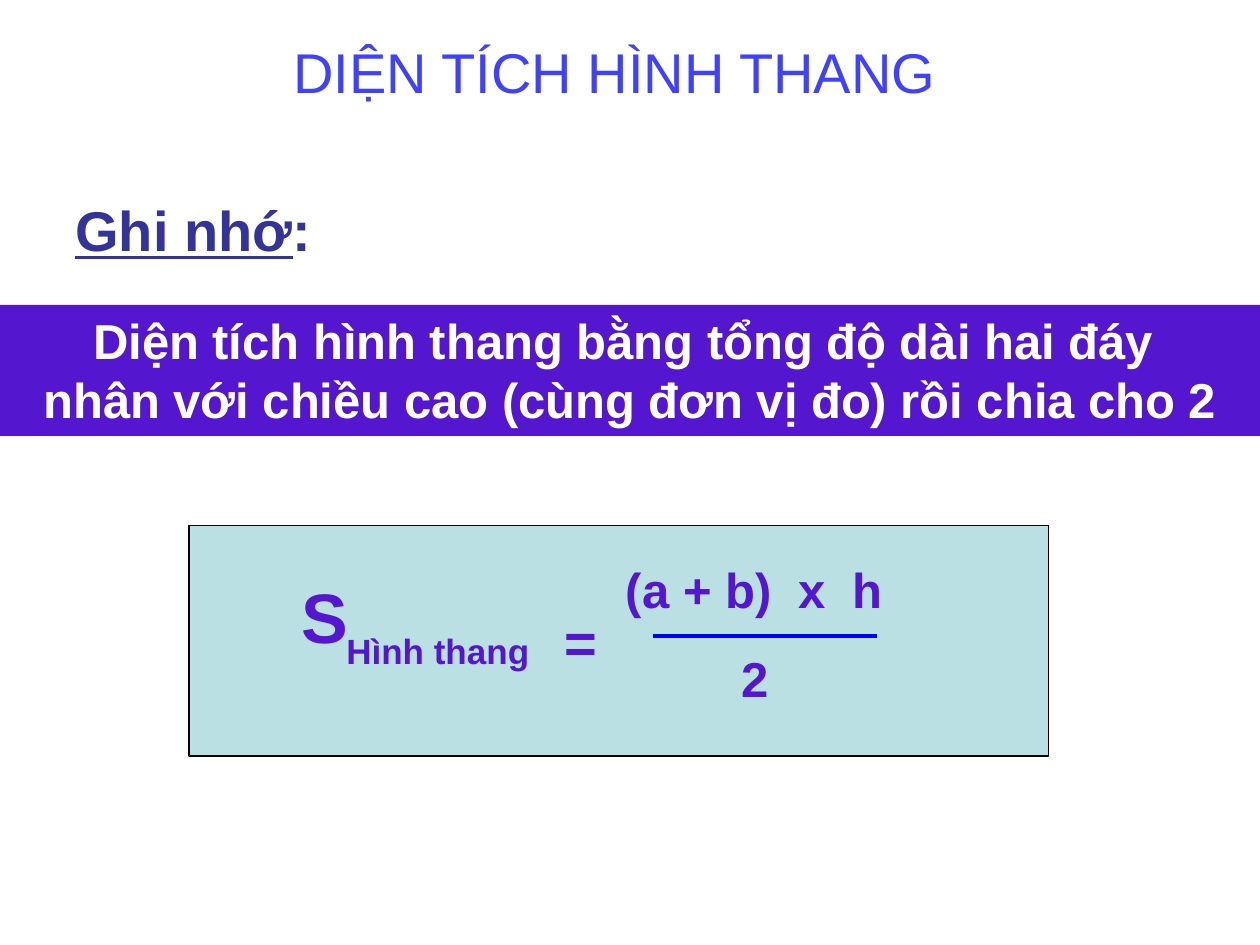
import pptx
import pptx.util
import pptx.dml.color
import pptx.enum.dml
import pptx.enum.shapes
import pptx.enum.text
import pptx.oxml.ns
from lxml import etree

Pt = pptx.util.Pt
RGBColor = pptx.dml.color.RGBColor
Align = pptx.enum.text.PP_ALIGN
Anchor = pptx.enum.text.MSO_ANCHOR
RECT = pptx.enum.shapes.MSO_SHAPE.RECTANGLE

BLUE = RGBColor(0x00, 0x00, 0xFF)
NAVY = RGBColor(0x33, 0x33, 0x99)
VIOLET = RGBColor(0x54, 0x17, 0xCF)
AQUA = RGBColor(0xBB, 0xE0, 0xE3)
WHITE = RGBColor(0xFF, 0xFF, 0xFF)
BLACK = RGBColor(0x00, 0x00, 0x00)

# Content: runs, box (left, top, width, height), size, alignment
TITLE = "DIỆN TÍCH HÌNH THANG"
RULE = ("Diện tích hình thang bằng tổng độ dài hai đáy \v"
        "nhân với chiều cao (cùng đơn vị đo) rồi chia cho 2")
NOTE = ["Ghi nhớ", ":"]
TERMS = [
    (["="], (315.4, 343.4, 43.9, 46), 32, Align.LEFT),
    (["S"], (165.1, 324, 48.7, 55.4), 40, Align.LEFT),
    (["(a + b)", " ", "x", " ", "h"], (350.6, 316.1, 274.3, 41), 28, Align.LEFT),
    (["2"], (354.2, 367.2, 154.1, 41), 28, Align.CENTER),
    (["Hình thang"], (190.8, 356.4, 162, 31.7), 20, Align.LEFT),
]
BAR = (373, 363.6, 501.1, 363.6)
GAP = 0.278  # width of a space, in ems


def write(shape, runs, size, color, align, bold=True):
    frame = shape.text_frame
    frame.word_wrap = True
    frame.vertical_anchor = Anchor.TOP
    para = frame.paragraphs[0]
    para.text = runs[0]
    for text in runs[1:]:
        para.add_run().text = text
    para.alignment = align
    for run in para.runs:
        run.font.name = "Arial"
        run.font.size = Pt(size)
        run.font.bold = bold
        run.font.color.rgb = color
    return para.runs


def add_text(shapes, runs, box, size, color, align):
    shape = shapes.add_textbox(*map(Pt, box))
    return write(shape, runs, size, color, align)


def add_rect(shapes, box, fill):
    shape = shapes.add_shape(RECT, *map(Pt, box))
    shape.shadow.inherit = False
    shape.fill.solid()
    shape.fill.fore_color.rgb = fill
    shape.line.fill.background()
    return shape


deck = pptx.Presentation()
deck.slide_width, deck.slide_height = Pt(720), Pt(540)
slide = deck.slides.add_slide(deck.slide_layouts[5])

# Title in three-quarter opaque blue
title = slide.shapes.title
title.left, title.top, title.width, title.height = map(Pt, (48.2, 18, 606.2, 36))
runs = write(title, [TITLE], 32, BLUE, Align.CENTER, bold=False)
title.text_frame.word_wrap = False
title.text_frame.auto_size = pptx.enum.text.MSO_AUTO_SIZE.NONE
qn = pptx.oxml.ns.qn
for tone in title.element.iter(qn("a:srgbClr")):
    etree.SubElement(tone, qn("a:alpha")).set("val", "75000")

# Rule on a full-width band
band = add_rect(slide.shapes, (0, 174.2, 720, 74.9), VIOLET)
write(band, [RULE], 28, WHITE, Align.CENTER)

# Heading, underlined up to the colon
runs = add_text(slide.shapes, NOTE, (36, 108, 167.8, 46), 32, NAVY, Align.LEFT)
runs[0].font.underline = True

# Formula panel
group = slide.shapes.add_group_shape().shapes
panel = add_rect(group, (108, 300.2, 491, 131.8), AQUA)
panel.line.color.rgb = BLACK
panel.line.width = Pt(0.75)
for words, box, size, align in TERMS:
    for run in add_text(group, words, box, size, VIOLET, align):
        if run.text == " ":  # wide gap around the times sign
            run.font._element.set("spc", str(round(GAP * size * 100)))

# Fraction bar
bar = group.add_connector(pptx.enum.shapes.MSO_CONNECTOR.STRAIGHT, *map(Pt, BAR))
bar.line.color.rgb = BLUE
bar.line.width = Pt(2.25)
etree.SubElement(bar.element.spPr, qn("a:effectLst"))

deck.save("out.pptx")
